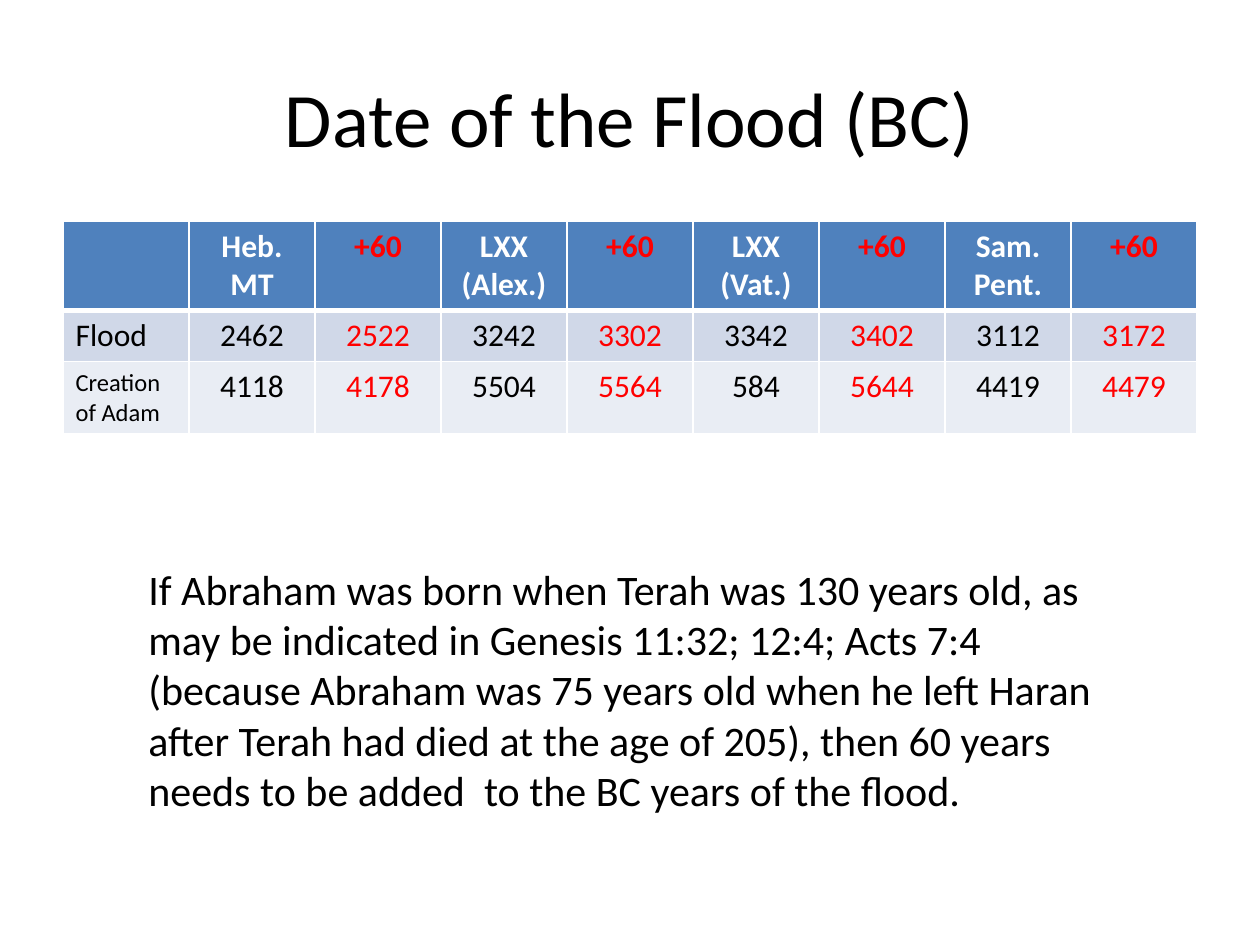
from pptx import Presentation
from pptx.dml.color import RGBColor
from pptx.enum.text import MSO_ANCHOR, PP_ALIGN
from pptx.oxml import parse_xml
from pptx.oxml.ns import nsdecls
from pptx.util import Emu, Pt

LEFT, CENTER = PP_ALIGN.LEFT, PP_ALIGN.CENTER
TOP, MIDDLE = MSO_ANCHOR.TOP, MSO_ANCHOR.MIDDLE

BLACK = RGBColor(0x00, 0x00, 0x00)
WHITE = RGBColor(0xFF, 0xFF, 0xFF)
RED = RGBColor(0xFF, 0x00, 0x00)
ROW_FILLS = [
    RGBColor(0x4F, 0x81, 0xBD),
    RGBColor(0xD0, 0xD8, 0xE8),
    RGBColor(0xE9, 0xED, 0xF4),
]


def px(length):
    return Emu(round(length * 914400 / 126))


def write_text(frame, text, size=18, color=BLACK, bold=False, align=LEFT, anchor=TOP):
    frame.word_wrap = True
    frame.vertical_anchor = anchor
    for index, line in enumerate(text.split("\n")):
        paragraph = frame.add_paragraph() if index else frame.paragraphs[0]
        paragraph.alignment = align
        run = paragraph.add_run()
        run.text = line
        run.font.name = "Calibri"
        run.font.size = Pt(size)
        run.font.bold = bold
        run.font.color.rgb = color


presentation = Presentation()
presentation.slide_width = px(1260)
presentation.slide_height = px(945)
slide = presentation.slides.add_slide(presentation.slide_layouts[5])

title = slide.shapes.title
title.left, title.top, title.width, title.height = px(63), px(38), px(1134), px(157)
write_text(title.text_frame, "Date of the Flood (BC)", size=44, align=CENTER, anchor=MIDDLE)

rows = [
    ["", "Heb.\nMT", "+60", "LXX\n(Alex.)", "+60", "LXX\n(Vat.)", "+60", "Sam.\nPent.", "+60"],
    ["Flood", "2462", "2522", "3242", "3302", "3342", "3402", "3112", "3172"],
    ["Creation of Adam", "4118", "4178", "5504", "5564", "584", "5644", "4419", "4479"],
]
row_heights = [88, 51, 72]
table = slide.shapes.add_table(
    len(rows), len(rows[0]), px(63), px(221), px(1134), px(sum(row_heights))
).table
for column in table.columns:
    column.width = px(126)

for row_index, values in enumerate(rows):
    table.rows[row_index].height = px(row_heights[row_index])
    header = row_index == 0
    border_widths = {
        "lnL": 1,
        "lnR": 1,
        "lnT": 3 if row_index == 1 else 1,
        "lnB": 3 if header else 1,
    }
    for column_index, value in enumerate(values):
        cell = table.cell(row_index, column_index)
        properties = cell._tc.get_or_add_tcPr()
        for side, width in border_widths.items():
            properties.append(parse_xml(
                f'<a:{side} {nsdecls("a")} w="{Pt(width)}"><a:solidFill>'
                f'<a:srgbClr val="{WHITE}"/></a:solidFill></a:{side}>'
            ))
        cell.fill.solid()
        cell.fill.fore_color.rgb = ROW_FILLS[row_index]
        if not value:
            continue
        adjusted = column_index > 0 and column_index % 2 == 0
        write_text(
            cell.text_frame,
            value,
            size=14 if value == "Creation of Adam" else 18,
            color=RED if adjusted else WHITE if header else BLACK,
            bold=header,
            align=CENTER if column_index else LEFT,
        )

note = slide.shapes.add_textbox(px(136), px(557), px(998), px(267))
write_text(
    note.text_frame,
    "If Abraham was born when Terah was 130 years old, as may be indicated in "
    "Genesis 11:32; 12:4; Acts 7:4 (because Abraham was 75 years old when he left "
    "Haran after Terah had died at the age of 205), then 60 years needs to be added  "
    "to the BC years of the flood.",
    size=24,
)

presentation.save("out.pptx")
